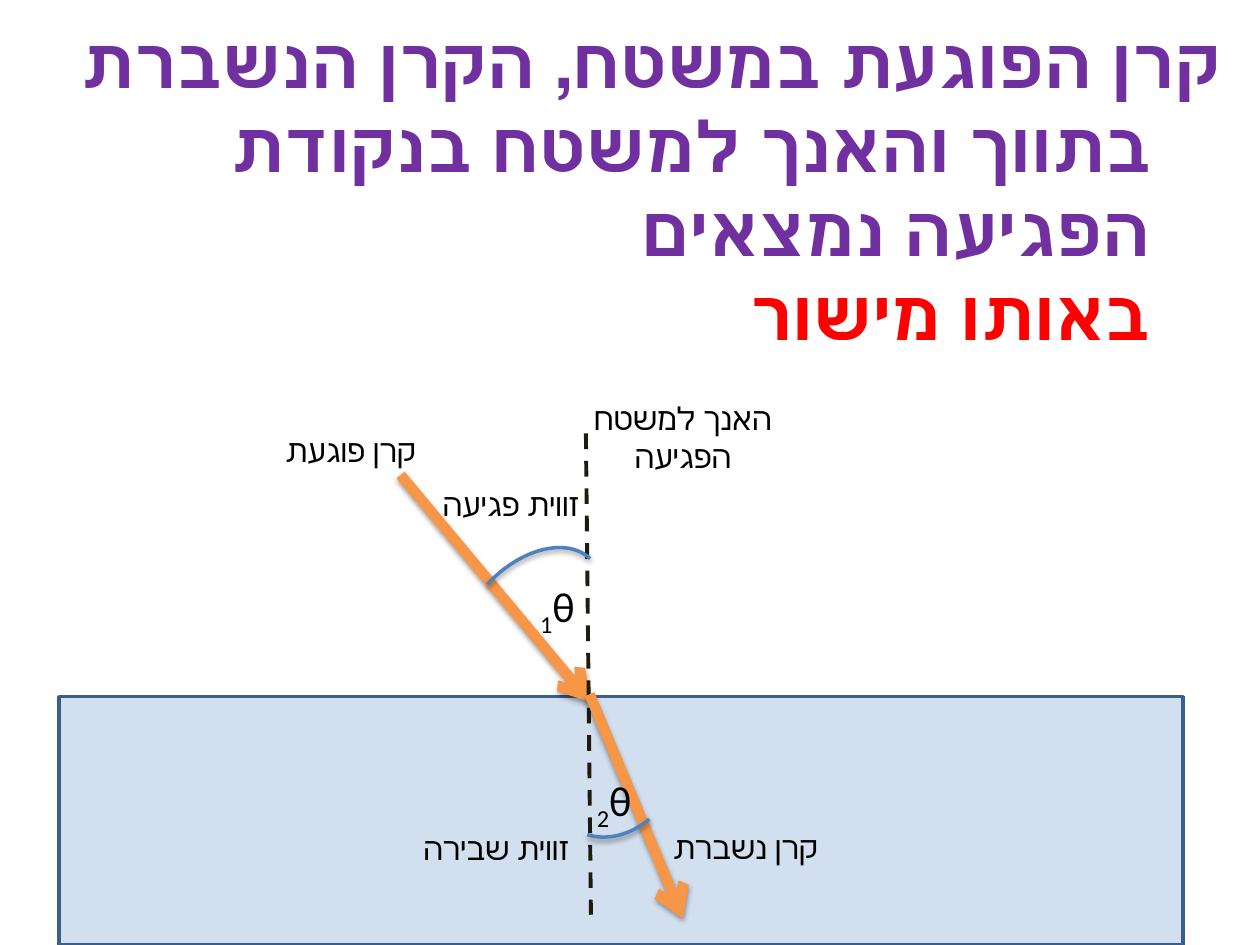
"""Build the slide on the refraction of a ray at a flat surface."""
from lxml.etree import SubElement
from pptx import Presentation
from pptx.dml.color import RGBColor
from pptx.enum.dml import MSO_LINE
from pptx.enum.shapes import MSO_CONNECTOR, MSO_SHAPE
from pptx.enum.text import PP_ALIGN
from pptx.oxml.ns import qn
from pptx.util import Inches, Pt

COLORS = {
    "medium": "4F81BD", "edge": "3A5F8C", "ray": "F79646", "normal": "1E1C11",
    "text": "000000", "title": "7030A0", "accent": "FF0000", "shadow": "000000",
}


def set_effects(shape, shadow):
    effects = SubElement(shape._element.spPr, qn("a:effectLst"))
    if shadow:
        outer = SubElement(effects, qn("a:outerShdw"), blurRad="40000",
                           dist="20000", dir="5400000", rotWithShape="0")
        color = SubElement(outer, qn("a:srgbClr"), val=COLORS["shadow"])
        SubElement(color, qn("a:alpha"), val="38000")


def add_text(box, runs, size, align=PP_ALIGN.RIGHT):
    tf = s.shapes.add_textbox(*map(Inches, box)).text_frame
    tf.word_wrap = True
    p = tf.paragraphs[0]
    p.alignment = align
    p._p.get_or_add_pPr().set("rtl", "1")
    p.font.size = Pt(size)
    p.font.name = "Calibri"
    for text, color in runs:
        r = p.add_run()
        r.text = text
        r.font.color.rgb = RGBColor.from_string(COLORS[color])
    return p


prs = Presentation()
prs.slide_width, prs.slide_height = Inches(10), Inches(7.5)
s = prs.slides.add_slide(prs.slide_layouts[6])

medium = s.shapes.add_shape(MSO_SHAPE.RECTANGLE, Inches(0.47), Inches(5.53),
                            Inches(8.92), Inches(1.97))
medium.shadow.inherit = False
medium.fill.solid()
medium.fill.fore_color.rgb = RGBColor.from_string(COLORS["medium"])
fill_color = medium.fill._xPr.find(qn("a:solidFill"))[0]
SubElement(fill_color, qn("a:alpha"), val="25000")
medium.line.color.rgb = RGBColor.from_string(COLORS["edge"])
medium.line.width = Pt(2)

lines = [
    ((3.18, 3.77, 4.68, 5.57), "ray", 6),
    ((4.65, 3.44, 4.69, 7.26), "normal", 2.25),
    ((4.68, 5.51, 5.42, 7.29), "ray", 6),
]
for ends, kind, width in lines:
    line = s.shapes.add_connector(MSO_CONNECTOR.STRAIGHT, *map(Inches, ends))
    line.line.color.rgb = RGBColor.from_string(COLORS[kind])
    line.line.width = Pt(width)
    if kind == "ray":
        SubElement(line.line._get_or_add_ln(), qn("a:tailEnd"), type="arrow")
    else:
        line.line.dash_style = MSO_LINE.DASH
    set_effects(line, kind == "ray")

arcs = [
    ((3.5, 4.49, 1.41, 0.92), 312.8, 162),
    ((4.16, 5.39, 1.41, 1.12), 106.8, 189.4),
]
for box, rotation, start in arcs:
    arc = s.shapes.add_shape(MSO_SHAPE.ARC, *map(Inches, box))
    arc.rotation = rotation
    arc.adjustments[0] = start
    arc.fill.background()
    arc.line.color.rgb = RGBColor.from_string(COLORS["medium"])
    arc.line.width = Pt(2)
    set_effects(arc, True)

labels = [
    ("קרן פוגעת", (2.03, 3.37, 1.37, 0.4), PP_ALIGN.RIGHT),
    ("האנך למשטח הפגיעה", (4.59, 3.12, 1.66, 0.71), PP_ALIGN.CENTER),
    ("קרן נשברת", (5.22, 6.52, 1.37, 0.4), PP_ALIGN.RIGHT),
    ("זווית פגיעה", (3.33, 3.8, 1.37, 0.4), PP_ALIGN.RIGHT),
    ("זווית שבירה", (3.25, 6.53, 1.37, 0.4), PP_ALIGN.RIGHT),
]
for text, box, align in labels:
    add_text(box, [(text, "text")], 18, align)

for index, left, top in [("1", 4.1, 4.56), ("2", 4.55, 6.1)]:
    p = add_text((left, top, 0.56, 0.5), [(index, "text"), ("θ", "text")], 24)
    p.runs[0].font._element.set("baseline", "-25000")

title = add_text((0, 0.1, 9.79, 2.04), [
    ("קרן הפוגעת במשטח, הקרן הנשברת בתווך והאנך למשטח בנקודת הפגיעה נמצאים", "title"),
], 40)
title.add_line_break()
r = title.add_run()
r.text = "באותו מישור"
r.font.color.rgb = RGBColor.from_string(COLORS["accent"])
title.font.bold = True
title.space_before = Pt(8)
title._p.pPr.set("marL", str(Inches(0.56)))
title._p.pPr.set("indent", str(Inches(-0.56)))

prs.save("out.pptx")
